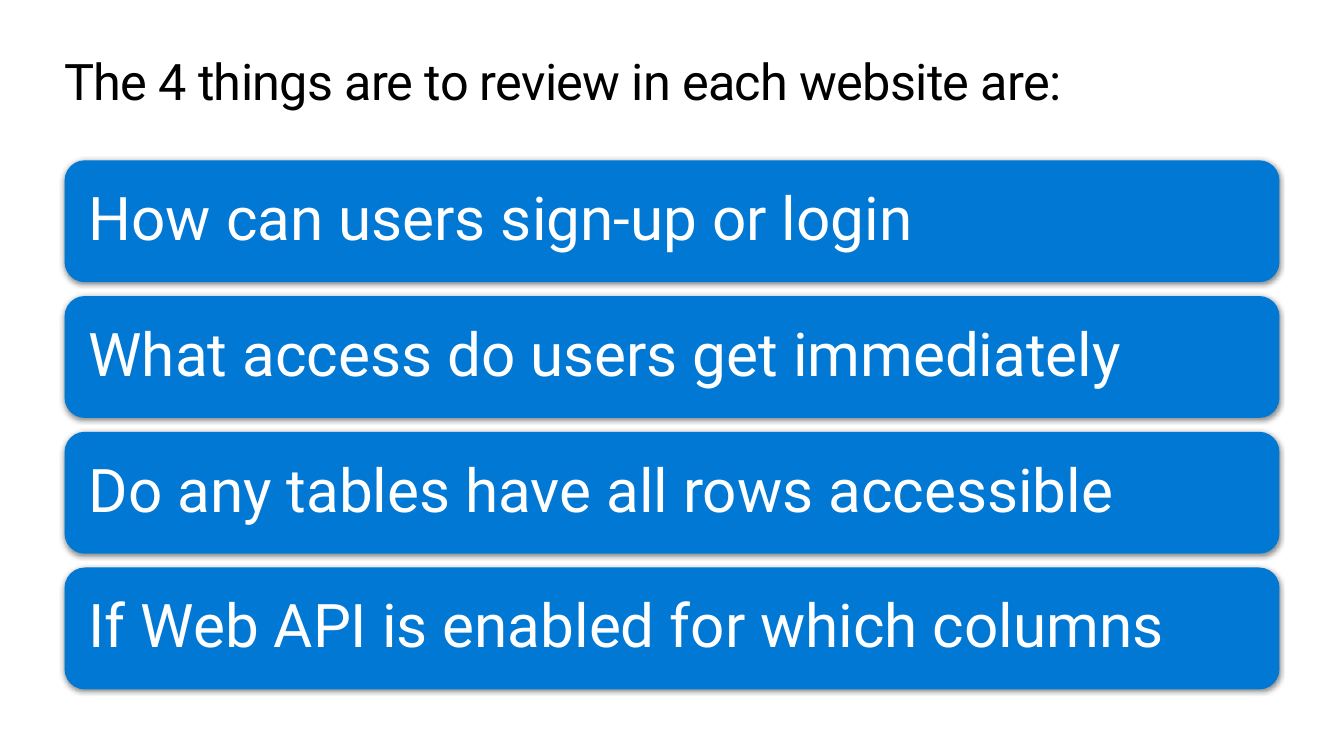
from lxml.etree import SubElement
from pptx import Presentation
from pptx.dml.color import RGBColor
from pptx.enum.shapes import MSO_SHAPE as Shape
from pptx.enum.text import MSO_ANCHOR as Anchor, MSO_AUTO_SIZE as AutoSize, PP_ALIGN as Align
from pptx.oxml.ns import qn
from pptx.util import Inches, Pt

LEFT, WIDTH = 0.64, 12.05
FIRST_TOP, LAST_TOP, BAR_HEIGHT = 1.59, 5.63, 1.21
HEADING = "The 4 things are to review in each website are:"
REVIEW_POINTS = [
    "How can users sign-up or login",
    "What access do users get immediately",
    "Do any tables have all rows accessible",
    "If Web API is enabled for which columns",
]


def colour(hex_code):
    return RGBColor.from_string(hex_code)


class ReviewSlide:
    font = "Roboto"
    bar_fill = "0078D4"
    bar_text = "FFFFFF"
    heading_text = "000000"

    def __init__(self, deck):
        self.slide = deck.slides.add_slide(deck.slide_layouts[5])

    def add_words(self, shape, words, size, hex_code, inset, anchor):
        frame = shape.text_frame
        frame.word_wrap = True
        frame.auto_size = AutoSize.NONE
        frame.vertical_anchor = anchor
        frame.margin_left = frame.margin_right = Inches(inset)
        frame.margin_top = frame.margin_bottom = Inches(inset)
        paragraph = frame.paragraphs[0]
        paragraph.alignment = Align.LEFT
        run = paragraph.add_run()
        run.text = words
        run.font.name = self.font
        run.font.size = Pt(size)
        run.font.color.rgb = colour(hex_code)
        return paragraph

    def heading(self, words):
        title = self.slide.shapes.title
        title.left, title.top = Inches(LEFT), Inches(0.5)
        title.width, title.height = Inches(WIDTH), Inches(0.61)
        paragraph = self.add_words(title, words, 36, self.heading_text, 0, Anchor.TOP)
        paragraph.runs[0].font._element.set("spc", "-50")

    def bar(self, words, top):
        bar = self.slide.shapes.add_shape(
            Shape.ROUNDED_RECTANGLE,
            Inches(LEFT), Inches(top), Inches(WIDTH), Inches(BAR_HEIGHT),
        )
        bar.fill.solid()
        bar.fill.fore_color.rgb = colour(self.bar_fill)
        bar.line.fill.background()
        self.soft_shadow(bar)
        paragraph = self.add_words(bar, words, 43, self.bar_text, 0.18, Anchor.MIDDLE)
        paragraph.line_spacing = 0.9

    def soft_shadow(self, shape):
        shape.shadow.inherit = False
        effects = shape._element.spPr.find(qn("a:effectLst"))
        shadow = SubElement(
            effects, qn("a:outerShdw"), blurRad=str(Pt(3.5)), dist=str(Pt(1.1)),
            dir="5400000", algn="ctr", rotWithShape="0",
        )
        tint = SubElement(shadow, qn("a:srgbClr"), val="000000")
        SubElement(tint, qn("a:alpha"), val="45000")


def main():
    deck = Presentation()
    deck.slide_width, deck.slide_height = Inches(13.33), Inches(7.5)
    review = ReviewSlide(deck)
    review.heading(HEADING)
    pitch = (LAST_TOP - FIRST_TOP) / (len(REVIEW_POINTS) - 1)
    for index, words in enumerate(REVIEW_POINTS):
        review.bar(words, FIRST_TOP + index * pitch)
    deck.save("out.pptx")


if __name__ == "__main__":
    main()
